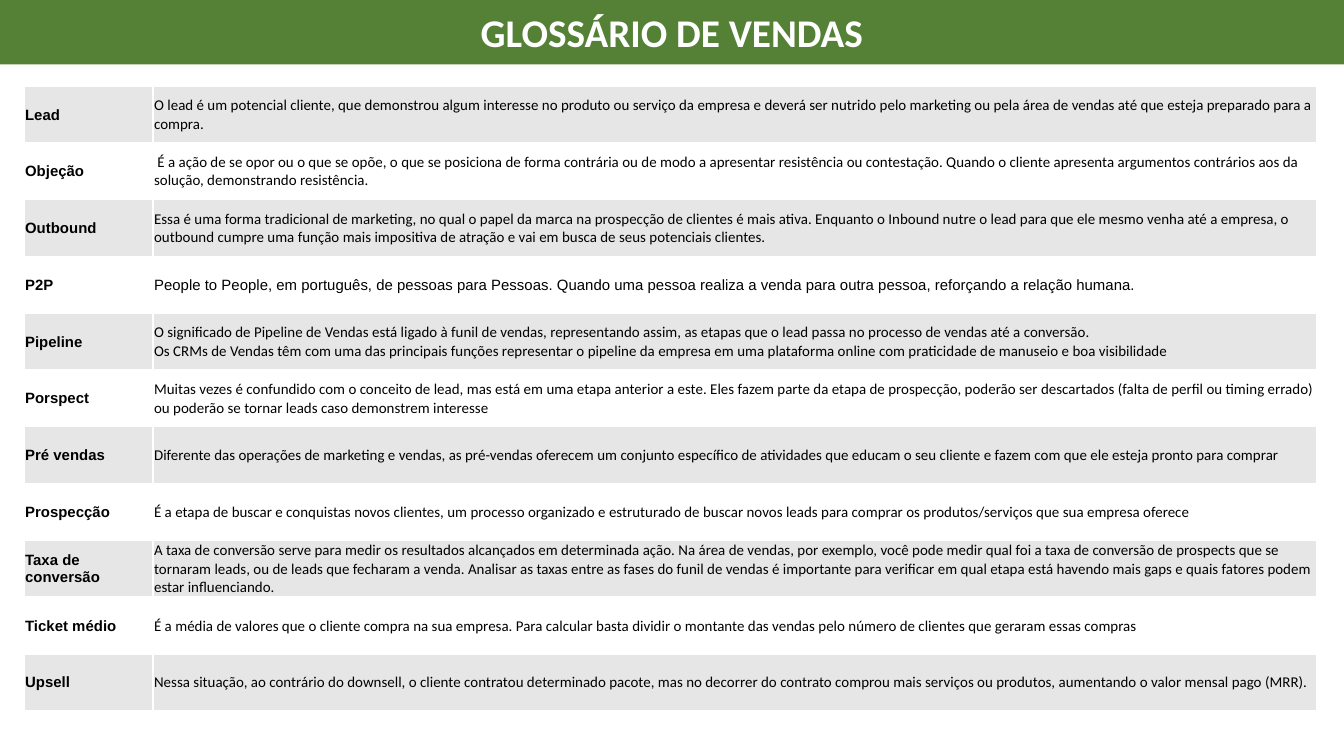
from lxml.etree import fromstring
from pptx import Presentation
from pptx.dml.color import RGBColor
from pptx.enum.shapes import MSO_SHAPE
from pptx.enum.text import MSO_ANCHOR, PP_ALIGN
from pptx.oxml.ns import nsdecls
from pptx.util import Inches, Pt

WIDTH = 10
HEIGHT = WIDTH * 9 / 16
TITLE = "GLOSSÁRIO DE VENDAS"
BANNER_HEIGHT = 0.48
TABLE_LEFT, TABLE_TOP, TABLE_HEIGHT = 0.18, 0.64, 4.65
COLUMN_WIDTHS = (0.96, 8.66)
CELL_MARGIN = Pt(0.5)
GREEN, BLACK, WHITE, GREY = "548135", "000000", "FFFFFF", "E7E6E6"
BORDER_SIDES = ("lnL", "lnR", "lnT", "lnB")
ARIAL_DEFINITIONS = {"P2P"}

GLOSSARY = [
    ("Lead", "O lead é um potencial cliente, que demonstrou algum interesse no produto ou serviço da empresa e deverá ser nutrido pelo marketing ou pela área de vendas até que esteja preparado para a compra."),
    ("Objeção", " É a ação de se opor ou o que se opõe, o que se posiciona de forma contrária ou de modo a apresentar resistência ou contestação. Quando o cliente apresenta argumentos contrários aos da solução, demonstrando resistência."),
    ("Outbound", "Essa é uma forma tradicional de marketing, no qual o papel da marca na prospecção de clientes é mais ativa. Enquanto o Inbound nutre o lead para que ele mesmo venha até a empresa, o outbound cumpre uma função mais impositiva de atração e vai em busca de seus potenciais clientes."),
    ("P2P", "People to People, em português, de pessoas para Pessoas. Quando uma pessoa realiza a venda para outra pessoa, reforçando a relação humana."),
    ("Pipeline", "O significado de Pipeline de Vendas está ligado à funil de vendas, representando assim, as etapas que o lead passa no processo de vendas até a conversão.\n"
                 "Os CRMs de Vendas têm com uma das principais funções representar o pipeline da empresa em uma plataforma online com praticidade de manuseio e boa visibilidade"),
    ("Porspect", "Muitas vezes é confundido com o conceito de lead, mas está em uma etapa anterior a este. Eles fazem parte da etapa de prospecção, poderão ser descartados (falta de perfil ou timing errado) ou poderão se tornar leads caso demonstrem interesse"),
    ("Pré vendas", "Diferente das operações de marketing e vendas, as pré-vendas oferecem um conjunto específico de atividades que educam o seu cliente e fazem com que ele esteja pronto para comprar"),
    ("Prospecção", "É a etapa de buscar e conquistas novos clientes, um processo organizado e estruturado de buscar novos leads para comprar os produtos/serviços que sua empresa oferece"),
    ("Taxa de conversão", "A taxa de conversão serve para medir os resultados alcançados em determinada ação. Na área de vendas, por exemplo, você pode medir qual foi a taxa de conversão de prospects que se tornaram leads, ou de leads que fecharam a venda. Analisar as taxas entre as fases do funil de vendas é importante para verificar em qual etapa está havendo mais gaps e quais fatores podem estar influenciando."),
    ("Ticket médio", "É a média de valores que o cliente compra na sua empresa. Para calcular basta dividir o montante das vendas pelo número de clientes que geraram essas compras"),
    ("Upsell", "Nessa situação, ao contrário do downsell, o cliente contratou determinado pacote, mas no decorrer do contrato comprou mais serviços ou produtos, aumentando o valor mensal pago (MRR)."),
]


def paint(fill, color):
    """Give a fill one solid colour."""
    fill.solid()
    fill.fore_color.rgb = RGBColor.from_string(color)


def format_text(text_frame, font_name, size, color, bold):
    """Apply one font to every run of a text frame."""
    for paragraph in text_frame.paragraphs:
        for run in paragraph.runs:
            run.font.name = font_name
            run.font.size = Pt(size)
            run.font.bold = bold
            run.font.color.rgb = RGBColor.from_string(color)


def add_borders(cell, color):
    """Draw a one-point line on each side of a cell."""
    properties = cell._tc.get_or_add_tcPr()
    for index, side in enumerate(BORDER_SIDES):
        properties.insert(index, fromstring(
            f'<a:{side} {nsdecls("a")} w="{Pt(1)}"><a:solidFill>'
            f'<a:srgbClr val="{color}"/></a:solidFill></a:{side}>'))


def fill_cell(cell, text, font_name, bold, background):
    """Write and style one glossary cell."""
    cell.text_frame.text = text
    format_text(cell.text_frame, font_name, 8, BLACK, bold)
    cell.vertical_anchor = MSO_ANCHOR.MIDDLE
    cell.margin_left = cell.margin_right = cell.margin_top = CELL_MARGIN
    cell.margin_bottom = 0
    paint(cell.fill, background)
    add_borders(cell, WHITE)


def add_banner(slide):
    """Add the title band across the top."""
    banner = slide.shapes.add_shape(
        MSO_SHAPE.RECTANGLE, 0, 0, Inches(WIDTH), Inches(BANNER_HEIGHT))
    banner.shadow.inherit = False
    paint(banner.fill, GREEN)
    banner.line.fill.background()
    text_frame = banner.text_frame
    text_frame.text = TITLE
    text_frame.vertical_anchor = MSO_ANCHOR.MIDDLE
    text_frame.margin_left = text_frame.margin_right = Inches(0.07)
    text_frame.margin_top = text_frame.margin_bottom = Inches(0.04)
    text_frame.paragraphs[0].alignment = PP_ALIGN.CENTER
    format_text(text_frame, "Calibri", 21, WHITE, True)


def add_glossary(slide):
    """Add the table of terms and definitions."""
    table = slide.shapes.add_table(
        len(GLOSSARY), len(COLUMN_WIDTHS), Inches(TABLE_LEFT), Inches(TABLE_TOP),
        Inches(sum(COLUMN_WIDTHS)), Inches(TABLE_HEIGHT)).table
    table.first_row = table.horz_banding = False
    for column, width in zip(table.columns, COLUMN_WIDTHS):
        column.width = Inches(width)
    for index, (term, definition) in enumerate(GLOSSARY):
        background = WHITE if index % 2 else GREY
        definition_font = "Arial" if term in ARIAL_DEFINITIONS else "Calibri"
        fill_cell(table.cell(index, 0), term, "Arial", True, background)
        fill_cell(table.cell(index, 1), definition, definition_font, False, background)


def main():
    """Build the glossary slide."""
    presentation = Presentation()
    presentation.slide_width = Inches(WIDTH)
    presentation.slide_height = Inches(HEIGHT)
    slide = presentation.slides.add_slide(presentation.slide_layouts[6])
    add_banner(slide)
    add_glossary(slide)
    presentation.save("out.pptx")


if __name__ == "__main__":
    main()
